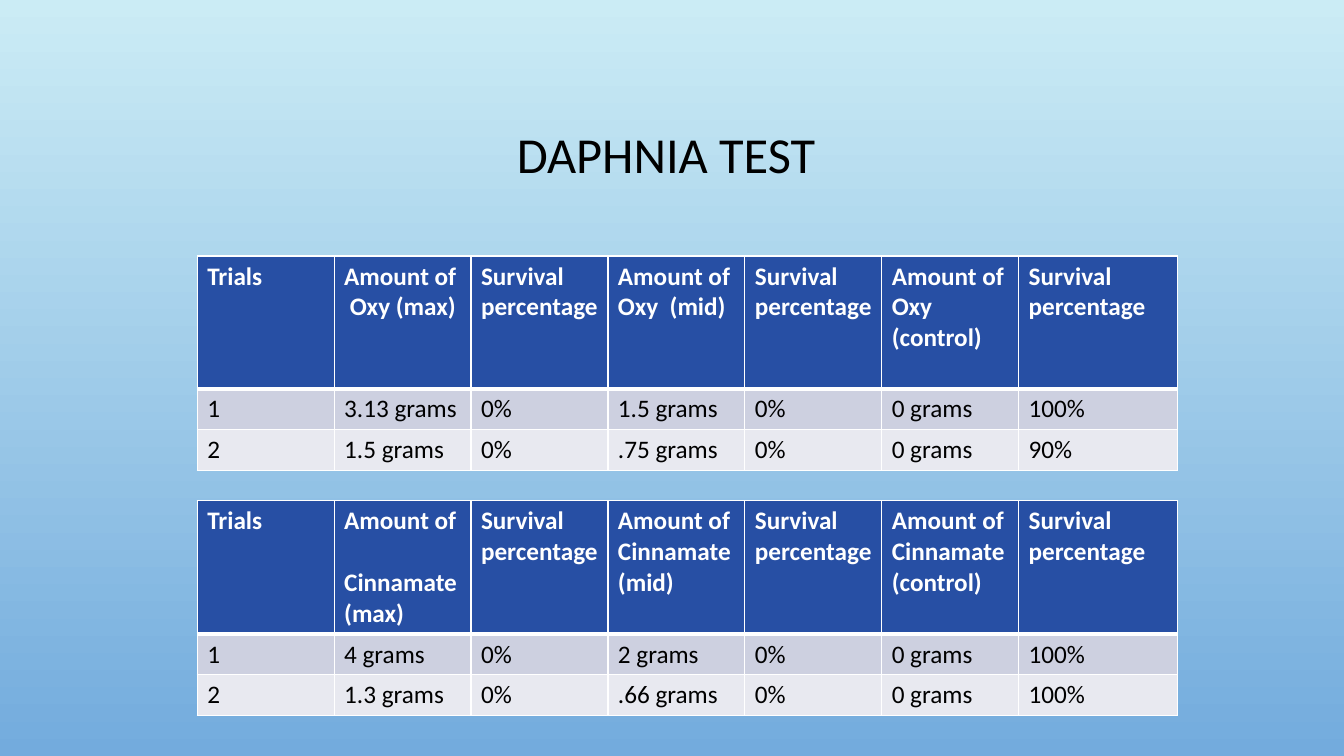
from dataclasses import dataclass

from lxml.etree import SubElement
from pptx import Presentation
from pptx.dml.color import RGBColor
from pptx.enum.text import MSO_ANCHOR, MSO_AUTO_SIZE, PP_ALIGN
from pptx.oxml.ns import qn
from pptx.slide import Slide
from pptx.util import Cm, Length, Pt

SKY_TOP = RGBColor(0xCB, 0xEC, 0xF5)
SKY_BOTTOM = RGBColor(0x73, 0xAB, 0xDD)
HEADER_BLUE = RGBColor(0x27, 0x4F, 0xA4)
BANDS = (RGBColor(0xCD, 0xD0, 0xE0), RGBColor(0xE8, 0xE9, 0xF0))
BLACK = RGBColor(0, 0, 0)
WHITE = RGBColor(0xFF, 0xFF, 0xFF)

TITLE_FONT = {"name": "Calibri", "size": Pt(36), "bold": False}
HEADER_FONT = {"name": "Calibri", "size": Pt(18), "bold": True}
BODY_FONT = {**HEADER_FONT, "bold": False}

COLUMN_WIDTHS = [Cm(3.45)] * 6 + [Cm(4)]
ROW_HEIGHTS = [Cm(3.35), Cm(1.03), Cm(1.03)]
TABLE_LEFT = Cm(4.97)
THIN, THICK = Pt(1), Pt(3)


@dataclass(frozen=True)
class SurvivalTable:
    top: Length
    max_dose: str
    mid_dose: str
    control_dose: str
    trials: tuple[tuple[str, ...], ...]

    def rows(self) -> list[tuple[str, ...]]:
        survival = "Survival percentage"
        header = ("Trials", self.max_dose, survival, self.mid_dose, survival,
                  self.control_dose, survival)
        return [header, *self.trials]


SURVIVAL_TABLES = (
    SurvivalTable(
        Cm(6.45), "Amount of\v Oxy (max)", "Amount of Oxy  (mid)",
        "Amount of Oxy (control)",
        (("1", "3.13 grams", "0%", "1.5 grams", "0%", "0 grams", "100%"),
         ("2", "1.5 grams", "0%", ".75 grams", "0%", "0 grams", "90%")),
    ),
    SurvivalTable(
        Cm(12.62), "Amount of\v Cinnamate (max)", "Amount of Cinnamate (mid)",
        "Amount of Cinnamate (control)",
        (("1", "4 grams", "0%", "2 grams", "0%", "0 grams", "100%"),
         ("2", "1.3 grams", "0%", ".66 grams", "0%", "0 grams", "100%")),
    ),
)


def set_font(paragraph, values: dict, color: RGBColor) -> None:
    for run in paragraph.runs:
        for attribute, value in values.items():
            setattr(run.font, attribute, value)
        run.font.color.rgb = color


def set_borders(cell, top: Length, bottom: Length) -> None:
    properties = cell._tc.get_or_add_tcPr()
    for side, width in {"L": THIN, "R": THIN, "T": top, "B": bottom}.items():
        line = SubElement(properties, qn(f"a:ln{side}"), w=str(int(width)))
        fill = SubElement(line, qn("a:solidFill"))
        SubElement(fill, qn("a:srgbClr"), val=str(WHITE))


def add_sky(slide: Slide) -> None:
    sky = slide.background.fill
    sky.gradient()
    sky.gradient_angle = 270
    for stop, color in zip(sky.gradient_stops, (SKY_TOP, SKY_BOTTOM)):
        stop.color.rgb = color


def add_title(slide: Slide, text: str) -> None:
    title = slide.shapes.title
    place = {"left": Cm(2.54), "top": Cm(1.73), "width": Cm(28.78), "height": Cm(4.45)}
    for attribute, value in place.items():
        setattr(title, attribute, value)
    frame = title.text_frame
    frame.text = text
    frame.auto_size = MSO_AUTO_SIZE.NONE
    frame.vertical_anchor = MSO_ANCHOR.MIDDLE
    heading = frame.paragraphs[0]
    heading.alignment = PP_ALIGN.CENTER
    heading.line_spacing = 0.9
    set_font(heading, TITLE_FONT, BLACK)


def add_survival_table(slide: Slide, survival: SurvivalTable) -> None:
    rows = survival.rows()
    table = slide.shapes.add_table(
        len(rows), len(COLUMN_WIDTHS), TABLE_LEFT, survival.top,
        Length(sum(COLUMN_WIDTHS)), Length(sum(ROW_HEIGHTS))).table
    for column, width in zip(table.columns, COLUMN_WIDTHS):
        column.width = width
    for index, (row, height, texts) in enumerate(zip(table.rows, ROW_HEIGHTS, rows)):
        row.height = height
        is_header = index == 0
        for cell, text in zip(row.cells, texts):
            cell.text = text
            set_borders(cell, THICK if index == 1 else THIN, THICK if is_header else THIN)
            cell.fill.solid()
            cell.fill.fore_color.rgb = HEADER_BLUE if is_header else BANDS[index - 1]
            set_font(cell.text_frame.paragraphs[0],
                     HEADER_FONT if is_header else BODY_FONT,
                     WHITE if is_header else BLACK)


def main() -> None:
    presentation = Presentation()
    presentation.slide_width = Cm(33.87)
    presentation.slide_height = Cm(19.05)
    slide = presentation.slides.add_slide(presentation.slide_layouts[5])

    # Background and heading
    add_sky(slide)
    add_title(slide, "DAPHNIA TEST ")

    # Oxy and Cinnamate tables
    for survival in SURVIVAL_TABLES:
        add_survival_table(slide, survival)

    presentation.save("out.pptx")


if __name__ == "__main__":
    main()
